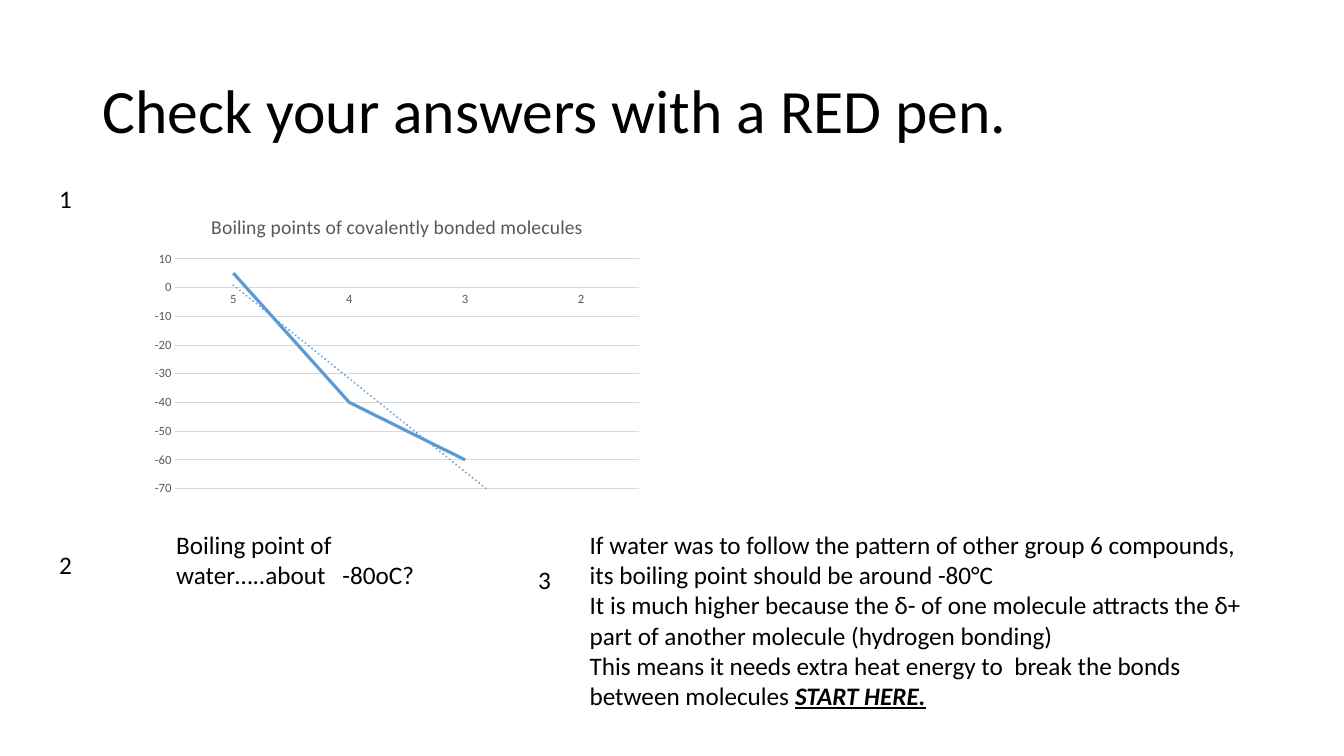
import pptx
import pptx.chart.data
import pptx.dml.color
import pptx.enum.chart
import pptx.enum.text
import pptx.oxml
import pptx.oxml.ns
import pptx.util
from pptx.util import Cm, Pt

# Content
TITLE = "Check your answers with a RED pen."
CHART_TITLE = "Boiling points of covalently bonded molecules"
PERIODS = ["5", "4", "3", "2"]
BOILING_POINTS = [5, -40, -60, None]
CHART_BOX = (3.66, 5.0, 12.7, 7.62)
PLOT_AREA = {"x": 0.06, "y": 0.2, "w": 0.92, "h": 0.76}

# Each box: left, top, width, height in cm, then paragraphs of (text, emphasised) runs
TEXTS = [
    (1.24, 4.5, 1.09, 1.02, [[("1", False)]]),
    (1.24, 13.72, 1.09, 1.02, [[("2", False)]]),
    (13.31, 14.1, 1.09, 1.02, [[("3", False)]]),
    (4.19, 13.21, 7.54, 1.8, [[("Boiling point of water…..about   -80oC?", False)]]),
    (14.61, 13.21, 16.94, 4.88, [
        [("If water was to follow the pattern of other group 6 compounds, "
          "its boiling point should be around -80°C", False)],
        [("It is much higher because the δ- of one molecule attracts the δ+ "
          "part of another molecule (hydrogen bonding)", False)],
        [("This means it needs extra heat energy to  break the bonds "
          "between molecules ", False), ("START HERE.", True)],
    ]),
]
COLORS = {"text": "000000", "label": "595959", "grid": "D9D9D9", "series": "5B9BD5"}


def rgb(name):
    return pptx.dml.color.RGBColor.from_string(COLORS[name])


def set_font(font, size, color):
    font.name = "Calibri"
    font.size = Pt(size)
    font.bold = False
    font.color.rgb = rgb(color)


def set_line(line, color, width):
    line.color.rgb = rgb(color)
    line.width = Pt(width)


prs = pptx.Presentation()
prs.slide_width, prs.slide_height = Cm(33.87), Cm(19.05)
s = prs.slides.add_slide(prs.slide_layouts[5])

# Title
title = s.shapes.title
title.left, title.top, title.width, title.height = Cm(2.33), Cm(1.01), Cm(29.21), Cm(3.68)
title.text_frame.text = TITLE
title.text_frame.vertical_anchor = pptx.enum.text.MSO_ANCHOR.MIDDLE
p = title.text_frame.paragraphs[0]
p.alignment = pptx.enum.text.PP_ALIGN.LEFT
p.line_spacing = 0.9
set_font(p.font, 44, "text")

# Line chart
data = pptx.chart.data.CategoryChartData()
data.categories = PERIODS
data.add_series("Series 1", BOILING_POINTS)
chart = s.shapes.add_chart(pptx.enum.chart.XL_CHART_TYPE.LINE,
                           *map(Cm, CHART_BOX), data).chart
set_font(chart.font, 10, "text")
chart.has_legend = False
chart.has_title = True
chart.chart_title.text_frame.text = CHART_TITLE
set_font(chart.chart_title.text_frame.paragraphs[0].font, 14, "label")

for axis in (chart.category_axis, chart.value_axis):
    axis.major_tick_mark = pptx.enum.chart.XL_TICK_MARK.NONE
    axis.minor_tick_mark = pptx.enum.chart.XL_TICK_MARK.NONE
    set_font(axis.tick_labels.font, 9, "label")
set_line(chart.category_axis.format.line, "grid", 0.75)
values = chart.value_axis
values.minimum_scale, values.maximum_scale, values.major_unit = -70, 10, 10
values.format.line.fill.background()
values.has_major_gridlines = True
set_line(values.major_gridlines.format.line, "grid", 0.75)

series = chart.plots[0].series[0]
series.smooth = False
series.marker.style = pptx.enum.chart.XL_MARKER_STYLE.NONE
set_line(series.format.line, "series", 2.25)

# Plot area position and linear trend line
ns = pptx.oxml.ns.nsdecls("c", "a")
sides = "".join(f'<c:{k} val="{v}"/>' for k, v in PLOT_AREA.items())
layout = pptx.oxml.parse_xml(
    f'<c:layout {ns}><c:manualLayout><c:layoutTarget val="inner"/>'
    f'<c:xMode val="edge"/><c:yMode val="edge"/>{sides}</c:manualLayout></c:layout>')
plot_area = chart.plots[0]._element.getparent()
for old in plot_area.findall(pptx.oxml.ns.qn("c:layout")):
    plot_area.remove(old)
plot_area.insert(0, layout)

trend = pptx.oxml.parse_xml(
    f'<c:trendline {ns}><c:spPr><a:ln w="{Pt(1.5)}" cap="rnd"><a:solidFill>'
    f'<a:srgbClr val="{COLORS["series"]}"/></a:solidFill><a:prstDash val="sysDot"/>'
    '</a:ln></c:spPr><c:trendlineType val="linear"/><c:forward val="1"/>'
    '<c:dispRSqr val="0"/><c:dispEq val="0"/></c:trendline>')
series._element.find(pptx.oxml.ns.qn("c:cat")).addprevious(trend)

# Numbers and answers
for left, top, width, height, paragraphs in TEXTS:
    tf = s.shapes.add_textbox(Cm(left), Cm(top), Cm(width), Cm(height)).text_frame
    tf.word_wrap = True
    tf.auto_size = pptx.enum.text.MSO_AUTO_SIZE.SHAPE_TO_FIT_TEXT
    for i, runs in enumerate(paragraphs):
        p = tf.add_paragraph() if i else tf.paragraphs[0]
        set_font(p.font, 18, "text")
        for text, emphasised in runs:
            r = p.add_run()
            r.text = text
            if emphasised:
                r.font.bold = r.font.italic = r.font.underline = True

prs.save("out.pptx")
